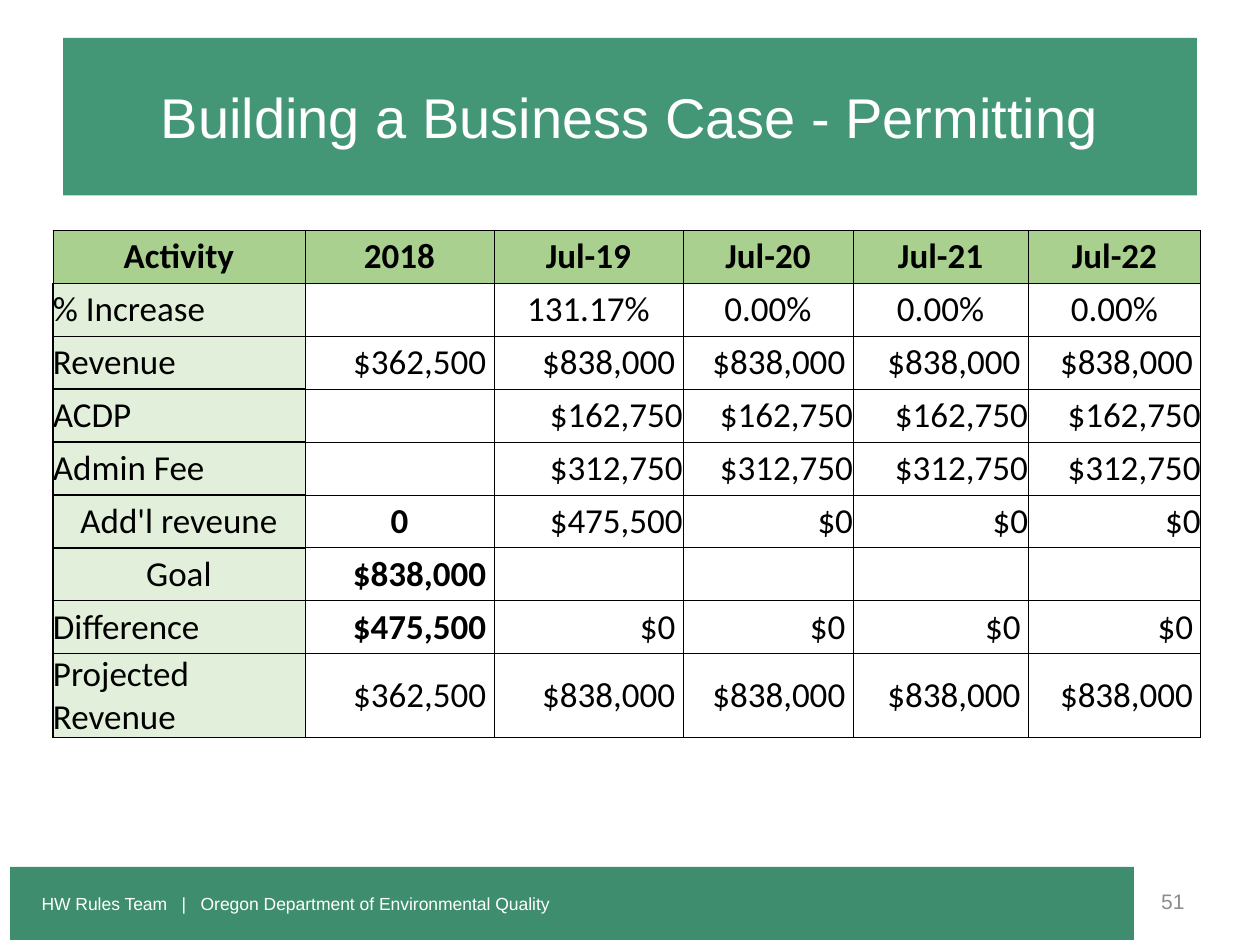
"""Build the permitting business case slide with its revenue table."""
from lxml import etree
from pptx import Presentation, util as u
from pptx.dml.color import RGBColor
from pptx.enum import shapes, text
from pptx.oxml.ns import qn

LEFT, CENTER, RIGHT, JUSTIFY = (
    text.PP_ALIGN.LEFT, text.PP_ALIGN.CENTER, text.PP_ALIGN.RIGHT, text.PP_ALIGN.JUSTIFY)

TITLE = "Building a Business Case - Permitting"
FOOTER = [("HW Rules Team", 0), (" ", 5.5), ("|", 0), (" ", 5.5),
          ("Oregon Department of Environmental Quality", 0)]
PAGE = "51"
HEADINGS = ["Activity", "2018", "Jul-19", "Jul-20", "Jul-21", "Jul-22"]
# label, its alignment, 2018, its alignment, 2018 in bold, later years, their alignment, right padding
ROWS = [
    ("% Increase", LEFT, "", CENTER, False, ["131.17%"] + ["0.00%"] * 3, CENTER, 0),
    ("Revenue", LEFT, "$362,500", RIGHT, False, ["$838,000"] * 4, RIGHT, 0.06),
    ("ACDP", LEFT, "", RIGHT, False, ["$162,750"] * 4, RIGHT, 0),
    ("Admin Fee", JUSTIFY, "", RIGHT, False, ["$312,750"] * 4, RIGHT, 0),
    ("Add'l reveune", CENTER, "0", CENTER, True, ["$475,500"] + ["$0"] * 3, RIGHT, 0),
    ("Goal", CENTER, "$838,000", RIGHT, True, [""] * 4, RIGHT, 0.06),
    ("Difference", JUSTIFY, "$475,500", RIGHT, True, ["$0"] * 4, RIGHT, 0.06),
    ("Projected Revenue", LEFT, "$362,500", RIGHT, False, ["$838,000"] * 4, RIGHT, 0.06),
]
COLUMN_WIDTHS = [2, 1.5, 1.5, 1.35, 1.39, 1.37]
ROW_HEIGHT = 0.42


def paint(fill, color):
    fill.solid()
    fill.fore_color.rgb = RGBColor.from_string(color)


def add_run(paragraph, words, size, color, font="Arial", bold=False, spacing=0):
    run = paragraph.add_run()
    run.text = words
    run.font.size, run.font.name, run.font.bold = u.Pt(size), font, bold
    run.font.color.rgb = RGBColor.from_string(color)
    if spacing:
        run.font._element.set("spc", str(int(spacing * 100)))


def add_borders(cell, widths):
    properties = cell._tc.get_or_add_tcPr()
    for side, width in zip("LRTB", widths):
        line = etree.SubElement(properties, qn(f"a:ln{side}"), w=str(u.Pt(width)))
        solid = etree.SubElement(line, qn("a:solidFill"))
        etree.SubElement(solid, qn("a:srgbClr"), val="000000")


def fill_cell(cell, words, align, bold=False, color=None, padding=0, borders=(0.5,) * 4):
    cell.margin_left = cell.margin_top = cell.margin_bottom = 0
    cell.margin_right = u.Inches(padding)
    cell.vertical_anchor = text.MSO_ANCHOR.MIDDLE
    add_borders(cell, borders)
    if color:
        paint(cell.fill, color)
    else:
        cell.fill.background()
    if words:
        paragraph = cell.text_frame.paragraphs[0]
        paragraph.alignment = align
        add_run(paragraph, words, 20, "000000", "Calibri", bold)


def add_title(slide):
    title = slide.shapes.title
    title.left, title.top, title.width, title.height = map(u.Inches, (0.5, 0.3, 9, 1.25))
    paint(title.fill, "439777")
    title.text_frame.vertical_anchor = text.MSO_ANCHOR.MIDDLE
    paragraph = title.text_frame.paragraphs[0]
    paragraph.alignment = CENTER
    add_run(paragraph, TITLE, 32, "FFFFFF")


def add_footer(slide):
    band = slide.shapes.add_shape(
        shapes.MSO_SHAPE.RECTANGLE, *map(u.Inches, (0.08, 6.88, 8.92, 0.58)))
    band.shadow.inherit = False
    paint(band.fill, "3F8D6F")
    band.line.fill.background()
    band.text_frame.margin_left = u.Inches(0.25)
    band.text_frame.vertical_anchor = text.MSO_ANCHOR.MIDDLE
    paragraph = band.text_frame.paragraphs[0]
    paragraph.alignment = LEFT
    for words, spacing in FOOTER:
        add_run(paragraph, words, 10, "FFFFFF", spacing=spacing)

    page = slide.shapes.add_textbox(*map(u.Inches, (7.17, 6.95, 2.33, 0.4))).text_frame
    page.word_wrap = True
    page.vertical_anchor = text.MSO_ANCHOR.MIDDLE
    page.paragraphs[0].alignment = RIGHT
    add_run(page.paragraphs[0], PAGE, 12, "8C8C8C")


def add_revenue_table(slide):
    row_count = len(ROWS) + 1
    table = slide.shapes.add_table(
        row_count, len(HEADINGS), u.Inches(0.42), u.Inches(1.83),
        u.Inches(sum(COLUMN_WIDTHS)), u.Inches(ROW_HEIGHT * row_count)).table
    table.first_row = table.horz_banding = False
    for column, width in zip(table.columns, COLUMN_WIDTHS):
        column.width = u.Inches(width)
    for row in table.rows:
        row.height = u.Inches(ROW_HEIGHT)

    for c, heading in enumerate(HEADINGS):
        fill_cell(table.cell(0, c), heading, CENTER, True, "A9D08E")
    for r, (label, label_align, base, base_align, bold, years, align, padding) in enumerate(ROWS, 1):
        top = 0.5 if r == 1 else 1
        fill_cell(table.cell(r, 0), label, label_align, color="E2EFDA", borders=(1, 0.5, top, 1))
        fill_cell(table.cell(r, 1), base, base_align, bold,
                  padding=padding)
        for c, value in enumerate(years, 2):
            fill_cell(table.cell(r, c), value, align, padding=padding)


def main():
    deck = Presentation()
    deck.slide_width, deck.slide_height = u.Inches(10), u.Inches(7.5)
    slide = deck.slides.add_slide(deck.slide_layouts[5])
    add_title(slide)
    add_footer(slide)
    add_revenue_table(slide)
    deck.save("out.pptx")


if __name__ == "__main__":
    main()
